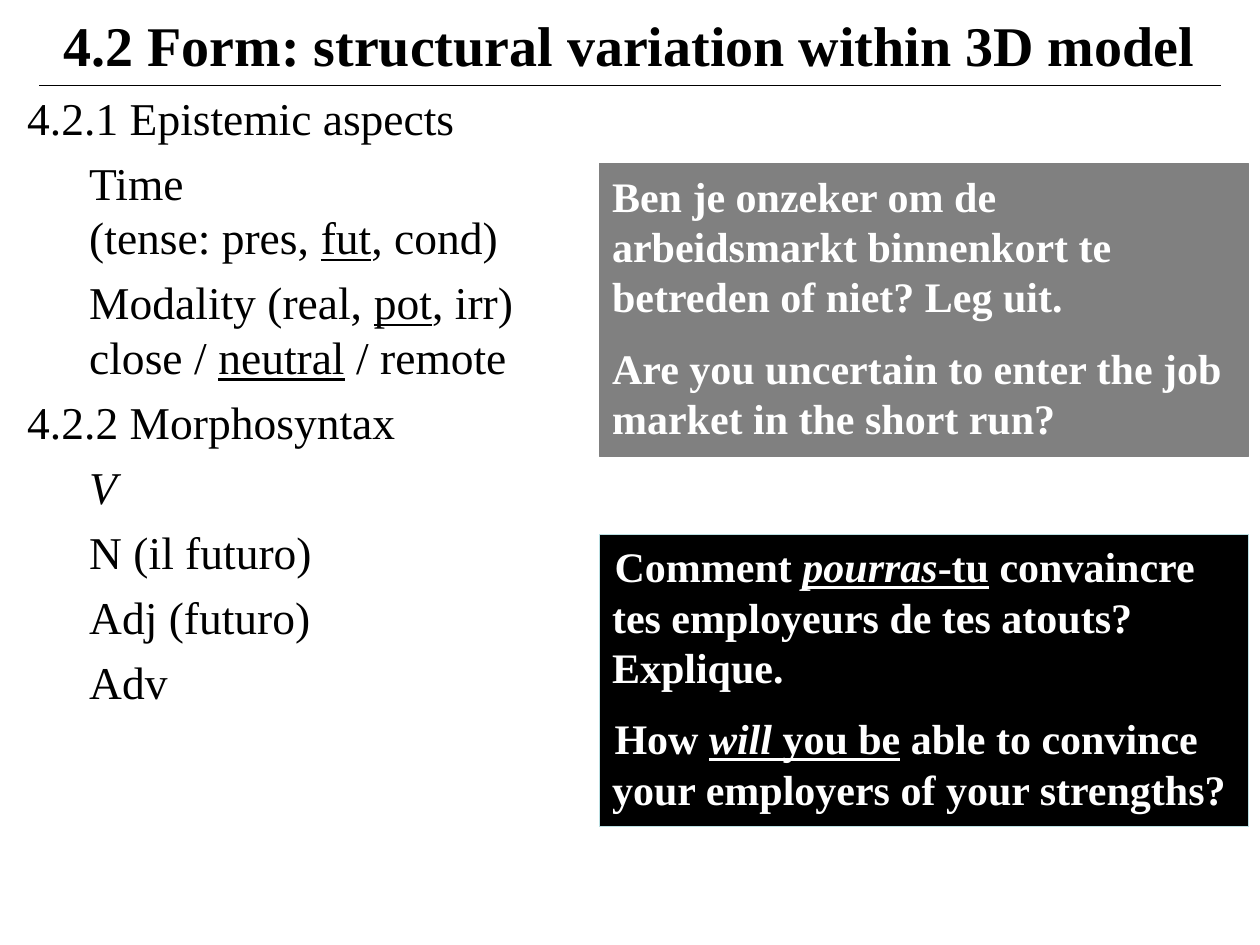
from pptx import Presentation
from pptx.dml.color import RGBColor
from pptx.enum.shapes import MSO_CONNECTOR, MSO_SHAPE
from pptx.enum.text import MSO_ANCHOR, MSO_AUTO_SIZE, PP_ALIGN
from pptx.oxml.ns import qn
from pptx.util import Cm, Pt
from lxml import etree

BLACK = RGBColor(0x00, 0x00, 0x00)
WHITE = RGBColor(0xFF, 0xFF, 0xFF)
GRAY = RGBColor(0x80, 0x80, 0x80)
PALE_TEAL = RGBColor(0xBB, 0xE0, 0xE3)

STRAIGHT = MSO_CONNECTOR.STRAIGHT
RECTANGLE = MSO_SHAPE.RECTANGLE
LEFT = PP_ALIGN.LEFT
CENTER = PP_ALIGN.CENTER

FONT = "Times New Roman"
FRAME = {
    "word_wrap": True,
    "auto_size": MSO_AUTO_SIZE.SHAPE_TO_FIT_TEXT,
    "vertical_anchor": MSO_ANCHOR.TOP,
    "margin_left": Cm(0.25),
    "margin_right": Cm(0.25),
    "margin_top": Cm(0.13),
    "margin_bottom": Cm(0.13),
}
TITLE_FONT = {"name": FONT, "size": Pt(32), "bold": True}
OUTLINE_FONT = {"name": FONT, "size": Pt(26), "bold": False}
EXAMPLE_FONT = {"name": FONT, "size": Pt(24), "bold": True}
PLAIN = {}
UNDERLINED = {"underline": True}
ITALIC = {"italic": True}
STRESSED = {"italic": True, "underline": True}

SUB_INDENT = Cm(1.25)
EXAMPLE_LEFT, EXAMPLE_WIDTH, EXAMPLE_HEIGHT = Cm(12.09), Cm(13.08), Cm(5.9)

OUTLINE = [
    (0, [("4.2.1 Epistemic aspects", PLAIN)]),
    (SUB_INDENT, [("Time \n(tense: pres, ", PLAIN), ("fut", UNDERLINED), (", cond)", PLAIN)]),
    (SUB_INDENT, [("Modality (real, ", PLAIN), ("pot", UNDERLINED), (", irr)\nclose / ", PLAIN),
                  ("neutral", UNDERLINED), (" / remote", PLAIN)]),
    (0, [("4.2.2 Morphosyntax", PLAIN)]),
    (SUB_INDENT, [("V", ITALIC)]),
    (SUB_INDENT, [("N (il futuro)", PLAIN)]),
    (SUB_INDENT, [("Adj (futuro)", PLAIN)]),
    (SUB_INDENT, [("Adv", PLAIN)]),
]
DUTCH_EXAMPLE = [
    [("Ben je onzeker om de arbeidsmarkt binnenkort te betreden of niet? Leg uit.", PLAIN)],
    [("Are you uncertain to enter the job market in the short run?", PLAIN)],
]
FRENCH_EXAMPLE = [
    [("Comment ", PLAIN), ("pourras", STRESSED), ("-tu", UNDERLINED),
     (" convaincre tes employeurs de tes atouts? Explique.", PLAIN)],
    [("How ", PLAIN), ("will", STRESSED), (" you be", UNDERLINED),
     (" able to convince your employers of your strengths?", PLAIN)],
]


def apply_format(target, values):
    for attribute, value in values.items():
        setattr(target, attribute, value)


def write_paragraphs(frame, entries, font, color, gap, align=LEFT, first_line=0):
    apply_format(frame, FRAME)
    for index, (margin, spans) in enumerate(entries):
        paragraph = frame.paragraphs[0] if index == 0 else frame.add_paragraph()
        properties = paragraph._p.get_or_add_pPr()
        properties.set("marL", str(int(margin)))
        properties.set("indent", str(int(first_line)))
        paragraph.alignment = align
        paragraph.space_before = gap if index else Pt(0)
        for text, style in spans:
            for part, line in enumerate(text.split("\n")):
                if part:
                    paragraph.add_line_break()
                run = paragraph.add_run()
                run.text = line
                apply_format(run.font, font | style)
                run.font.color.rgb = color


def place_title(slide, text):
    title = slide.shapes.title
    apply_format(title, {"left": Cm(0.79), "top": Cm(0.08), "width": Cm(23.8), "height": Cm(1.63)})
    write_paragraphs(title.text_frame, [(0, [(text, PLAIN)])], TITLE_FONT, BLACK, Pt(0), CENTER)


def add_title_rule(slide):
    rule = slide.shapes.add_connector(STRAIGHT, Cm(0.79), Cm(1.73), Cm(24.61), Cm(1.73))
    rule.line.color.rgb = BLACK
    rule.line.width = Pt(0.75)
    etree.SubElement(rule._element.spPr, qn("a:effectLst"))


def add_outline(slide):
    outline = slide.shapes.add_textbox(Cm(0.3), Cm(1.68), Cm(11), Cm(12.88))
    write_paragraphs(outline.text_frame, OUTLINE, OUTLINE_FONT, BLACK, Pt(6))


def add_example(slide, top, fill, border, sentences, first_line=0):
    example = slide.shapes.add_shape(RECTANGLE, EXAMPLE_LEFT, top, EXAMPLE_WIDTH, EXAMPLE_HEIGHT)
    example.shadow.inherit = False
    example.fill.solid()
    example.fill.fore_color.rgb = fill
    example.line.color.rgb = border
    example.line.width = Pt(0.75)
    entries = [(0, spans) for spans in sentences]
    write_paragraphs(example.text_frame, entries, EXAMPLE_FONT, WHITE, Pt(12), first_line=first_line)


def main():
    presentation = Presentation()
    presentation.slide_width = Cm(25.4)
    presentation.slide_height = Cm(19.05)
    slide = presentation.slides.add_slide(presentation.slide_layouts[5])
    add_outline(slide)
    place_title(slide, "4.2 Form: structural variation within 3D model")
    add_title_rule(slide)
    add_example(slide, Cm(3.3), GRAY, GRAY, DUTCH_EXAMPLE)
    add_example(slide, Cm(10.77), BLACK, PALE_TEAL, FRENCH_EXAMPLE, first_line=Cm(0.05))
    presentation.save("out.pptx")


if __name__ == "__main__":
    main()
